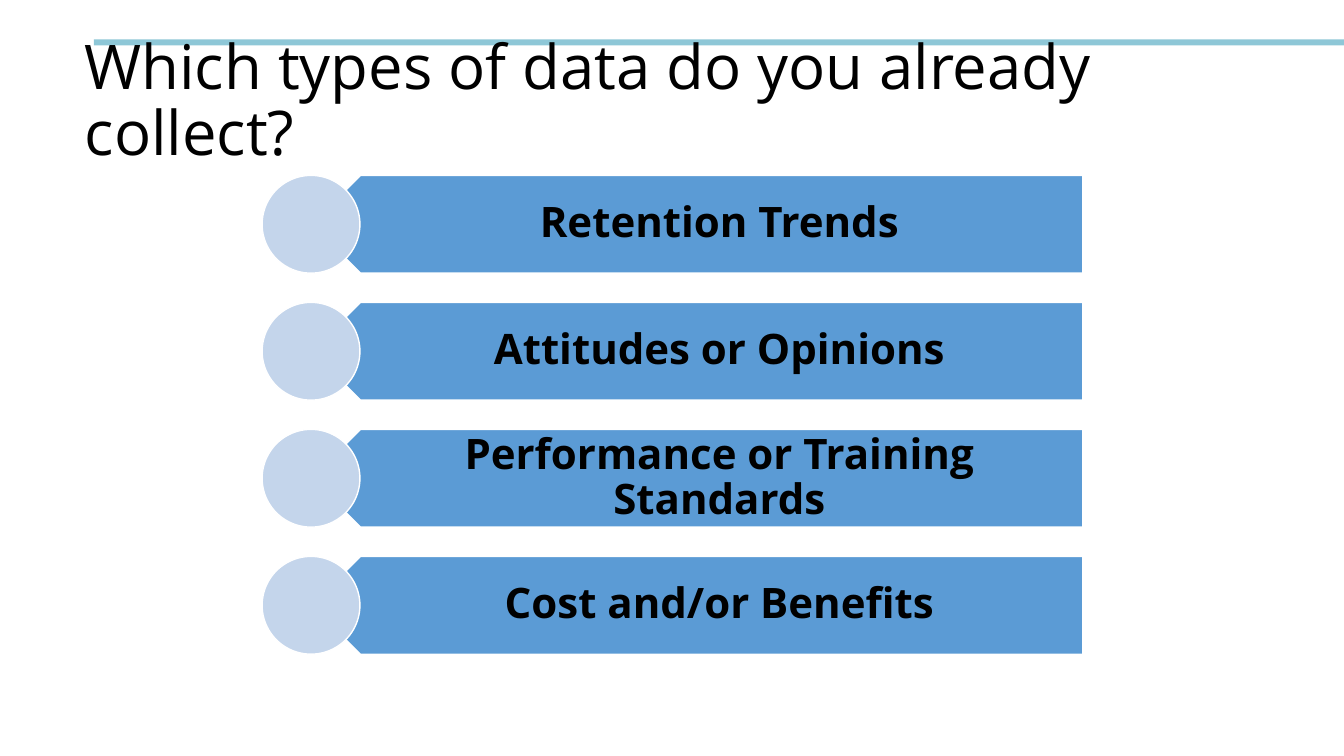
from pptx import Presentation
from pptx.dml.color import RGBColor
from pptx.enum import shapes, text
from pptx.util import Pt

PX = 9144  # 100 px to the inch
FONT = "Open Sans"
BLACK = RGBColor(0, 0, 0)
WHITE = RGBColor(255, 255, 255)
TEAL = RGBColor(0x8E, 0xC7, 0xD7)
BLUE = RGBColor(0x5B, 0x9B, 0xD5)
PALE = RGBColor(0xC4, 0xD5, 0xEB)
KINDS = ["Retention Trends", "Attitudes or Opinions",
         "Performance or Training Standards", "Cost and/or Benefits"]


def scale(*box):
    return [n * PX for n in box]


def draw(parent, kind, box, fill, line=None):
    shape = parent.add_shape(kind, *scale(*box))
    shape.shadow.inherit = False
    shape.fill.solid()
    shape.fill.fore_color.rgb = fill
    if line is None:
        shape.line.fill.background()
    else:
        shape.line.color.rgb = line
        shape.line.width = Pt(1)
    return shape


def write(frame, words, size, align, bold=False):
    frame.word_wrap = True
    frame.auto_size = text.MSO_AUTO_SIZE.NONE
    frame.vertical_anchor = text.MSO_ANCHOR.MIDDLE
    para = frame.paragraphs[0]
    para.text = words
    para.alignment = align
    para.line_spacing = 0.9
    para.space_before = Pt(0)
    font = para.font
    font.name, font.size, font.bold = FONT, Pt(size), bold
    font.color.rgb = BLACK


def header(slide, left, top, width, height):
    title = slide.shapes.title
    title.left, title.top, title.width, title.height = scale(left, top, width, height)
    write(title.text_frame, "Which types of data do you already collect?", 44,
          text.PP_ALIGN.LEFT)
    rule = draw(slide.shapes, shapes.MSO_SHAPE.RECTANGLE,
                (left + 19, top + 10, 1241, 6), TEAL)
    title._element.addprevious(rule._element)  # keeps the rule behind the title


def row(parent, words, left, top, width, size):
    """Draw a banner pointing left, its label and a disc of the given size."""
    mid = left + size // 2
    right = left + width
    banner = draw(parent, shapes.MSO_SHAPE.PENTAGON,
                  (mid + 1, top, right - mid - 1, size), BLUE, WHITE)
    banner.rotation = 180
    label = parent.add_textbox(*scale(mid + 25, top, right - mid - 25, size))
    frame = label.text_frame
    frame.margin_left, frame.margin_right = scale(43, 23)
    frame.margin_top = frame.margin_bottom = 12 * PX
    write(frame, words, 30, text.PP_ALIGN.CENTER, bold=True)
    draw(parent, shapes.MSO_SHAPE.OVAL, (left, top, size, size), PALE, WHITE)


def chevrons(slide, left, top, width, height):
    size = 97
    step = (height - size) // (len(KINDS) - 1)
    group = slide.shapes.add_group_shape()
    for i, words in enumerate(KINDS):
        row(group.shapes, words, left, top + i * step, width, size)


def main():
    deck = Presentation()
    deck.slide_width, deck.slide_height = scale(1333, 750)
    slide = deck.slides.add_slide(deck.slide_layouts[5])
    header(slide, 74, 29, 1228, 145)
    chevrons(slide, 260, 174, 814, 475)
    deck.save("out.pptx")


if __name__ == "__main__":
    main()
